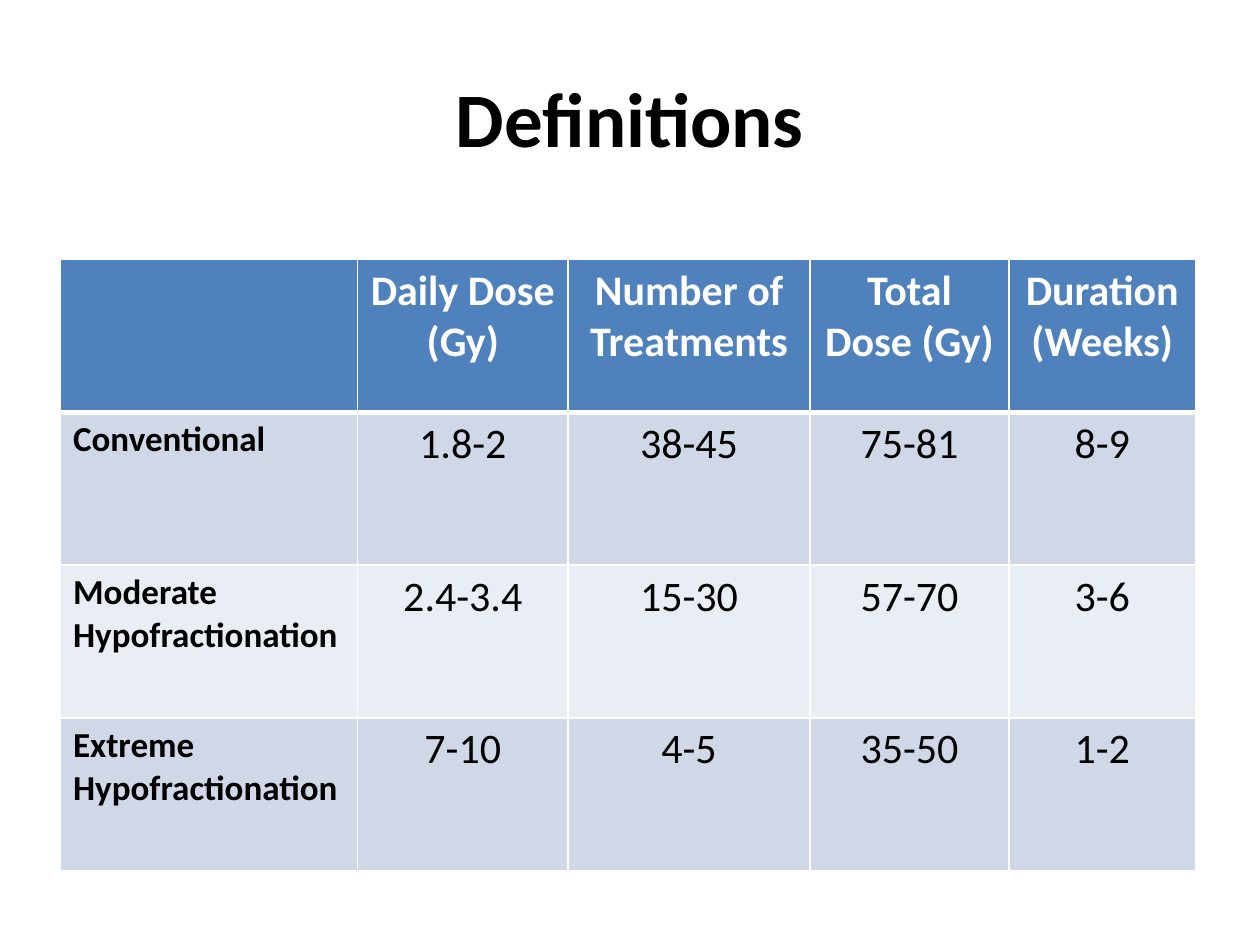
from lxml import etree
from pptx import Presentation
from pptx.dml.color import RGBColor
from pptx.enum.text import MSO_ANCHOR, PP_ALIGN
from pptx.oxml.ns import qn
from pptx.util import Cm, Pt

CENTER, LEFT = PP_ALIGN.CENTER, PP_ALIGN.LEFT
MIDDLE = MSO_ANCHOR.MIDDLE
TITLE_ONLY = 5

WHITE, BLACK, HEADER_BLUE = "FFFFFF", "000000", "4F81BD"
BANDS = ("D0D8E8", "E9EDF4")

# Text formats by role
TITLE_FORMAT = {"name": "Calibri", "size": Pt(44), "bold": True}
HEADER_FORMAT = {"name": "Calibri", "size": Pt(24), "bold": True}
LABEL_FORMAT = {"name": "Calibri", "size": Pt(20), "bold": True}
VALUE_FORMAT = {"name": "Calibri", "size": Pt(24), "bold": False}

COLUMN_WIDTHS = (5.99, 4.24, 4.88, 4.01, 3.76)
ROW_HEIGHT = 3.08
SCHEDULES = (
    ("", "Daily Dose (Gy)", "Number of Treatments", "Total Dose (Gy)", "Duration (Weeks)"),
    ("Conventional", "1.8-2", "38-45", "75-81", "8-9"),
    ("Moderate Hypofractionation", "2.4-3.4", "15-30", "57-70", "3-6"),
    ("Extreme Hypofractionation", "7-10", "4-5", "35-50", "1-2"),
)


def color(hex_value):
    return RGBColor.from_string(hex_value)


def write_text(frame, text, font_format, text_color, alignment):
    paragraph = frame.paragraphs[0]
    paragraph.alignment = alignment
    if not text:
        return
    run = paragraph.add_run()
    run.text = text
    for attribute, value in font_format.items():
        setattr(run.font, attribute, value)
    run.font.color.rgb = color(text_color)


def set_borders(cell, top=1, bottom=1):
    properties = cell._tc.get_or_add_tcPr()
    for side, points in (("L", 1), ("R", 1), ("T", top), ("B", bottom)):
        line = etree.SubElement(properties, qn(f"a:ln{side}"), w=str(Pt(points)))
        fill = etree.SubElement(line, qn("a:solidFill"))
        etree.SubElement(fill, qn("a:srgbClr"), val=WHITE)


def add_title(slide, text):
    title = slide.shapes.title
    title.left, title.top = Cm(1.27), Cm(0.76)
    title.width, title.height = Cm(22.86), Cm(3.18)
    title.text_frame.vertical_anchor = MIDDLE
    write_text(title.text_frame, text, TITLE_FORMAT, BLACK, CENTER)


def cell_style(row, column):
    """Return fill, font format, text colour and alignment of a cell."""
    if row == 0:
        return HEADER_BLUE, HEADER_FORMAT, WHITE, CENTER
    band = BANDS[(row - 1) % 2]
    if column == 0:
        return band, LABEL_FORMAT, BLACK, LEFT
    return band, VALUE_FORMAT, BLACK, CENTER


def add_schedule_table(slide):
    row_count = len(SCHEDULES)
    table = slide.shapes.add_table(
        row_count, len(COLUMN_WIDTHS), Cm(1.22), Cm(5.23),
        Cm(sum(COLUMN_WIDTHS)), Cm(ROW_HEIGHT * row_count)).table
    for column, width in zip(table.columns, COLUMN_WIDTHS):
        column.width = Cm(width)
    for r, schedule in enumerate(SCHEDULES):
        table.rows[r].height = Cm(ROW_HEIGHT)
        for c, text in enumerate(schedule):
            cell = table.cell(r, c)
            fill, font_format, text_color, alignment = cell_style(r, c)
            # A thicker rule parts the header from the body
            set_borders(cell, top=3 if r == 1 else 1, bottom=3 if r == 0 else 1)
            cell.fill.solid()
            cell.fill.fore_color.rgb = color(fill)
            write_text(cell.text_frame, text, font_format, text_color, alignment)


def main():
    presentation = Presentation()
    presentation.slide_width, presentation.slide_height = Cm(25.4), Cm(19.05)
    slide = presentation.slides.add_slide(presentation.slide_layouts[TITLE_ONLY])
    add_title(slide, "Definitions")
    add_schedule_table(slide)
    presentation.save("out.pptx")


if __name__ == "__main__":
    main()
